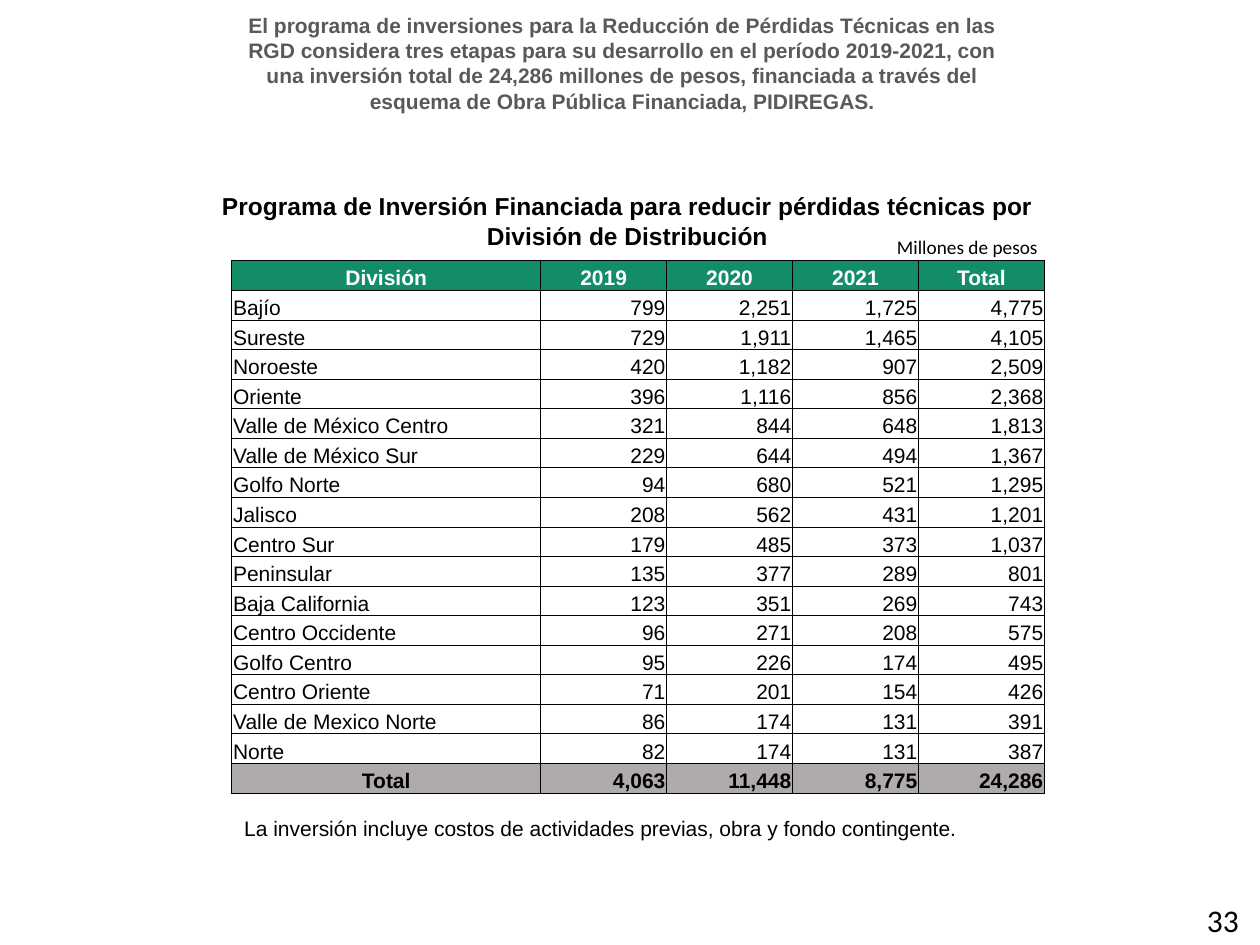
from lxml.etree import SubElement
from pptx import Presentation
from pptx.dml.color import RGBColor
from pptx.enum.text import MSO_ANCHOR as Anchor, PP_ALIGN as Align
from pptx.oxml.ns import qn
from pptx.util import Inches, Pt

COLORS = {"black": "000000", "white": "FFFFFF", "gray": "595959",
          "header": "128D68", "total": "AFABAB"}

# Content: text, (left, top, width, height) in percent of the slide, format
TEXTS = [
    ("Programa de Inversión Financiada para reducir pérdidas técnicas por "
     "División de Distribución",
     (15.7, 19.6, 68.2, 15.5),
     {"size": 14, "bold": True, "align": Align.CENTER}),
    ("33", (76, 94.67, 23.3, 5.33),
     {"size": 18, "name": "Calibri", "align": Align.RIGHT}),
    ("El programa de inversiones para la Reducción de Pérdidas Técnicas en las "
     "RGD considera tres etapas para su desarrollo en el período 2019-2021, con "
     "una inversión total de 24,286 millones de pesos, financiada a través del "
     "esquema de Obra Pública Financiada, PIDIREGAS.",
     (17.8, 0.67, 63.2, 10.4),
     {"bold": True, "color": "gray", "align": Align.CENTER}),
    ("La inversión incluye costos de actividades previas, obra y fondo contingente.",
     (18.4, 85.6, 60, 4), {}),
    ("Millones de pesos", (70.2, 24.27, 13.2, 3.87),
     {"size": 11, "name": "Calibri", "wrap": False}),
]

HEADER = ("División", "2019", "2020", "2021", "Total")
DIVISIONS = [
    ("Bajío", 799, 2251, 1725, 4775),
    ("Sureste", 729, 1911, 1465, 4105),
    ("Noroeste", 420, 1182, 907, 2509),
    ("Oriente", 396, 1116, 856, 2368),
    ("Valle de México Centro", 321, 844, 648, 1813),
    ("Valle de México Sur", 229, 644, 494, 1367),
    ("Golfo Norte", 94, 680, 521, 1295),
    ("Jalisco", 208, 562, 431, 1201),
    ("Centro Sur", 179, 485, 373, 1037),
    ("Peninsular", 135, 377, 289, 801),
    ("Baja California", 123, 351, 269, 743),
    ("Centro Occidente", 96, 271, 208, 575),
    ("Golfo Centro", 95, 226, 174, 495),
    ("Centro Oriente", 71, 201, 154, 426),
    ("Valle de Mexico Norte", 86, 174, 131, 391),
    ("Norte", 82, 174, 131, 387),
]
TOTAL = ("Total", 4063, 11448, 8775, 24286)

TABLE_BOX = (18.4, 27.6, 64.5, 56.4)
COLUMN_SHARES = (38, 15.5, 15.5, 15.5, 15.5)
CELL_FORMAT = {"margin_left": Inches(0.01), "margin_right": Inches(0.01),
               "margin_top": Inches(0.01), "margin_bottom": 0,
               "vertical_anchor": Anchor.BOTTOM}

presentation = Presentation()
presentation.slide_width, presentation.slide_height = Inches(10), Inches(7.5)
slide = presentation.slides.add_slide(presentation.slide_layouts[6])


def place(box):
    """Turn percentages of the slide into lengths."""
    sides = (presentation.slide_width, presentation.slide_height) * 2
    return [int(side * share / 100) for side, share in zip(sides, box)]


def write(paragraph, text, size=12, name="Arial", bold=False, color="black",
          align=Align.LEFT):
    paragraph.alignment = align
    run = paragraph.add_run()
    run.text = text
    for key, value in {"size": Pt(size), "name": name, "bold": bold}.items():
        setattr(run.font, key, value)
    run.font.color.rgb = RGBColor.from_string(COLORS[color])


def add_borders(cell):
    properties = cell._tc.get_or_add_tcPr()
    for side in ("lnL", "lnR", "lnT", "lnB"):
        line = SubElement(properties, qn(f"a:{side}"), w=str(Pt(0.5)))
        fill = SubElement(line, qn("a:solidFill"))
        SubElement(fill, qn("a:srgbClr"), val=COLORS["black"])


# Text boxes
for text, box, text_format in TEXTS:
    options = dict(text_format)
    frame = slide.shapes.add_textbox(*place(box)).text_frame
    frame.word_wrap = options.pop("wrap", True)
    write(frame.paragraphs[0], text, **options)

# Investment table
rows = [HEADER, *DIVISIONS, TOTAL]
left, top, width, height = place(TABLE_BOX)
table = slide.shapes.add_table(len(rows), len(HEADER), left, top, width, height).table
table.first_row = table.horz_banding = False
for column, share in zip(table.columns, COLUMN_SHARES):
    column.width = int(width * share / 100)

for row_index, values in enumerate(rows):
    table.rows[row_index].height = height // len(rows)
    is_header, is_total = values is HEADER, values is TOTAL
    for column_index, value in enumerate(values):
        cell = table.cell(row_index, column_index)
        for key, setting in CELL_FORMAT.items():
            setattr(cell, key, setting)
        add_borders(cell)
        if is_header or is_total:
            cell.fill.solid()
            fill_name = "header" if is_header else "total"
            cell.fill.fore_color.rgb = RGBColor.from_string(COLORS[fill_name])
        else:
            cell.fill.background()
        if is_header or (is_total and column_index == 0):
            align = Align.CENTER
        else:
            align = Align.RIGHT if column_index else Align.LEFT
        write(cell.text_frame.paragraphs[0],
              value if isinstance(value, str) else f"{value:,}",
              bold=is_header or is_total,
              color="white" if is_header else "black", align=align)

presentation.save("out.pptx")
